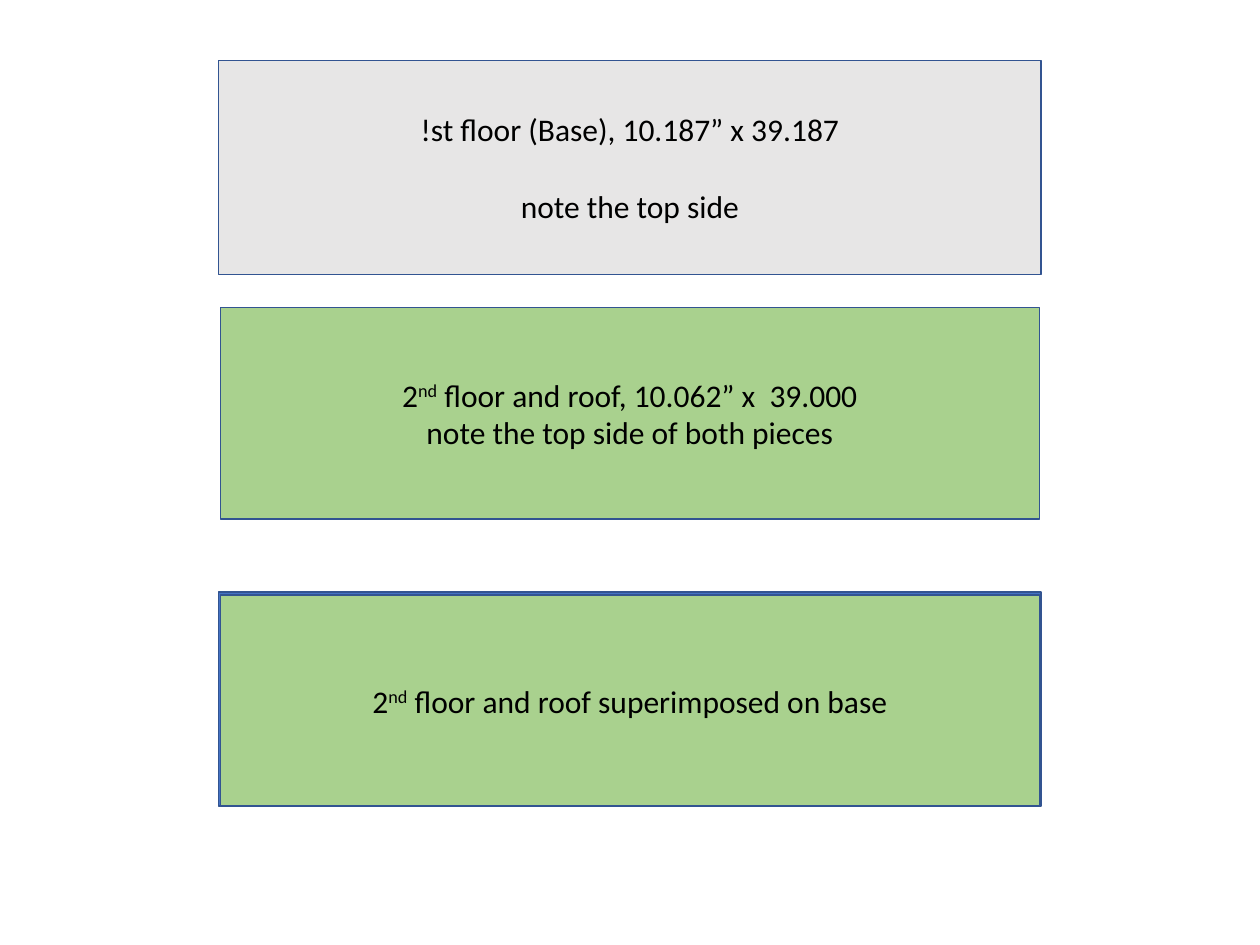
from pptx import Presentation
from pptx.dml.color import RGBColor
from pptx.enum.shapes import MSO_SHAPE
from pptx.enum.text import MSO_ANCHOR, PP_ALIGN
from pptx.util import Inches, Pt

RECTANGLE = MSO_SHAPE.RECTANGLE
MIDDLE = MSO_ANCHOR.MIDDLE
CENTER = PP_ALIGN.CENTER

GRAY = RGBColor(0xE7, 0xE6, 0xE6)
GREEN = RGBColor(0xA9, 0xD1, 0x8E)
BLUE = RGBColor(0x44, 0x72, 0xC4)
OUTLINE = RGBColor(0x32, 0x54, 0x91)
BLACK = RGBColor(0, 0, 0)

SLIDE_WIDTH, SLIDE_HEIGHT = 10, 7.5
BASE_SIZE = (6.53, 1.7)
FLOOR_SIZE = (6.5, 1.68)
LINE_GAP = 22  # one line of 18 pt text

presentation = Presentation()
presentation.slide_width = Inches(SLIDE_WIDTH)
presentation.slide_height = Inches(SLIDE_HEIGHT)
slide = presentation.slides.add_slide(presentation.slide_layouts[6])

# Each piece: top, size, fill, space between paragraphs, paragraphs.
# A paragraph is a list of runs; the run "nd" is raised.
pieces = [
    (0.48, BASE_SIZE, GRAY, LINE_GAP,
     [["!st floor (Base), 10.187” x 39.187"], ["note the top side"]]),
    (2.44, FLOOR_SIZE, GREEN, 0,
     [["2", "nd", " floor and roof, 10.062” x  39.000"],
      ["note the top side of both pieces"]]),
    (4.7, BASE_SIZE, BLUE, 0, []),
    (4.72, FLOOR_SIZE, GREEN, 0,
     [["2", "nd", " floor and roof superimposed on base"]]),
]

for top, (width, height), fill, gap, paragraphs in pieces:
    left = (SLIDE_WIDTH - width) / 2
    shape = slide.shapes.add_shape(
        RECTANGLE, Inches(left), Inches(top), Inches(width), Inches(height))
    shape.shadow.inherit = False
    shape.fill.solid()
    shape.fill.fore_color.rgb = fill
    shape.line.color.rgb = OUTLINE
    shape.line.width = Pt(1)

    text_frame = shape.text_frame
    text_frame.word_wrap = True
    text_frame.vertical_anchor = MIDDLE
    for index, texts in enumerate(paragraphs):
        paragraph = text_frame.add_paragraph() if index else text_frame.paragraphs[0]
        paragraph.alignment = CENTER
        if index:
            paragraph.space_before = Pt(gap)
        for text in texts:
            run = paragraph.add_run()
            run.text = text
            run.font.name = "Calibri"
            run.font.size = Pt(18)
            run.font.color.rgb = BLACK
            if text == "nd":
                run._r.get_or_add_rPr().set("baseline", "30000")

presentation.save("out.pptx")
